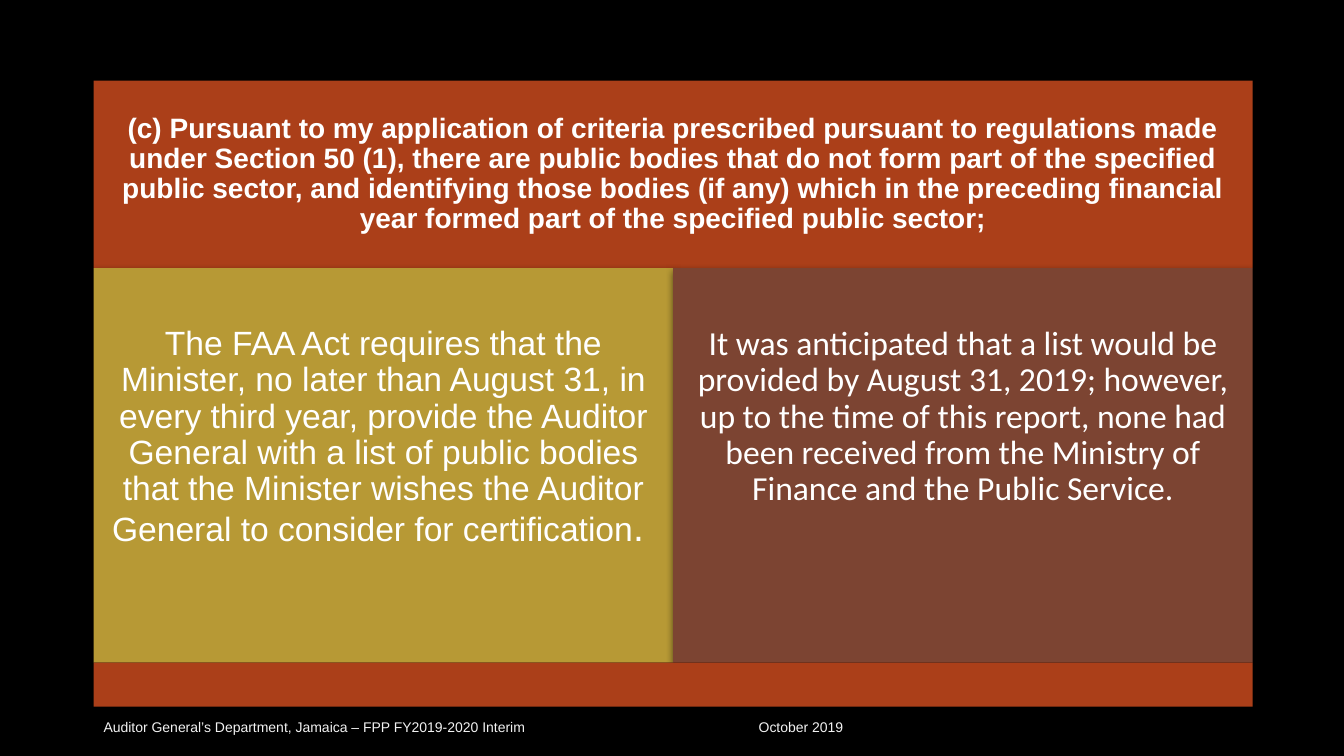
from dataclasses import dataclass

from lxml import etree
from pptx import Presentation
from pptx.dml.color import RGBColor
from pptx.enum.shapes import MSO_SHAPE
from pptx.enum.text import MSO_ANCHOR, PP_ALIGN
from pptx.oxml.ns import qn
from pptx.util import Cm, Pt

RECT = MSO_SHAPE.RECTANGLE
TOP, MIDDLE = MSO_ANCHOR.TOP, MSO_ANCHOR.MIDDLE
LEFT, CENTER = PP_ALIGN.LEFT, PP_ALIGN.CENTER


@dataclass(frozen=True)
class Theme:
    back: str = "000000"
    rust: str = "AB3F19"
    gold: str = "B79935"
    brown: str = "7C4432"
    white: str = "FFFFFF"
    pale: str = "F2F2F2"
    sans: str = "Arial"
    body: str = "Calibri"
    small: int = 10
    head: int = 20
    text: int = 24
    stop: int = 28


class Deck:
    def __init__(self, theme):
        self.theme = theme
        self.prs = Presentation()
        self.prs.slide_width, self.prs.slide_height = Cm(33.87), Cm(19.05)
        self.slide = self.prs.slides.add_slide(self.prs.slide_layouts[6])
        fill = self.slide.background.fill
        fill.solid()
        fill.fore_color.rgb = RGBColor.from_string(theme.back)

    def panel(self, box, color, shade=False):
        shape = self.slide.shapes.add_shape(RECT, *map(Cm, box))
        shape.fill.solid()
        shape.fill.fore_color.rgb = RGBColor.from_string(color)
        shape.line.fill.background()
        shape.shadow.inherit = False
        if shade:
            self.shade(shape)
        return shape

    def shade(self, shape):
        """Give the shape a soft shadow that falls straight down."""
        effects = shape._element.spPr.find(qn("a:effectLst"))
        outer = etree.SubElement(effects, qn("a:outerShdw"), blurRad=str(Pt(5)),
                                 dist=str(Pt(2)), dir="5400000", rotWithShape="0")
        color = etree.SubElement(outer, qn("a:srgbClr"), val=self.theme.back)
        etree.SubElement(color, qn("a:alpha"), val="60000")

    def label(self, shape, runs, color, align=CENTER, anchor=MIDDLE,
              pad=0.25, top=None, space=0.9):
        """Fill the shape with one paragraph of (text, font, size, bold) runs."""
        frame = shape.text_frame
        frame.word_wrap = True
        frame.vertical_anchor = anchor
        frame.margin_left = frame.margin_right = frame.margin_bottom = Cm(pad)
        frame.margin_top = Cm(pad if top is None else top)
        para = frame.paragraphs[0]
        para.alignment, para.line_spacing = align, space
        for text, face, size, bold in runs:
            run = para.add_run()
            run.text = text
            run.font.name, run.font.size, run.font.bold = face, Pt(size), bold
            run.font.color.rgb = RGBColor.from_string(color)
        return para

    def footer(self, box, runs, tab):
        """Add one line whose second part starts at the tab stop."""
        shape = self.slide.shapes.add_textbox(*map(Cm, box))
        para = self.label(shape, runs, self.theme.pale, LEFT, top=0.13, space=1.0)
        shape.text_frame.margin_bottom = Cm(0.13)
        stops = etree.SubElement(para._p.get_or_add_pPr(), qn("a:tabLst"))
        etree.SubElement(stops, qn("a:tab"), pos=str(Cm(tab)), algn="l")


def main():
    look = Theme()
    deck = Deck(look)
    left, wide = 2.36, 29.21
    half = wide / 2
    head_y, body_y, band_y, foot_y = 2.03, 6.76, 16.7, 17.81

    title = (
        "(c) Pursuant to my application of criteria prescribed pursuant to "
        "regulations made under Section 50 (1), there are public bodies that do "
        "not form part of the specified public sector, and identifying those "
        "bodies (if any) which in the preceding financial year formed part of "
        "the specified public sector;")
    head = deck.panel((left, head_y, wide, body_y - head_y), look.rust)
    deck.label(head, [(title, look.sans, look.head, True)], look.white, pad=0.2)

    rule = (
        "The FAA Act requires that the Minister, no later than August 31, in "
        "every third year, provide the Auditor General with a list of public "
        "bodies that the Minister wishes the Auditor General to consider for "
        "certification")
    result = (
        "It was anticipated that a list would be provided by August 31, 2019; "
        "however, up to the time of this report, none had been received from "
        "the Ministry of Finance and the Public Service.")
    cards = [
        (look.gold, [(rule, look.sans, look.text, False),
                     (". ", look.sans, look.stop, False)]),
        (look.brown, [(result, look.body, look.text, False)]),
    ]
    for i, (color, runs) in enumerate(cards):
        box = (left + i * half, body_y, half, band_y - body_y)
        card = deck.panel(box, color, shade=True)
        deck.label(card, runs, look.white, anchor=TOP, top=1.47)

    deck.panel((left, band_y, wide, foot_y - band_y), look.rust)
    note = "Auditor General’s Department, Jamaica – FPP FY2019-2020 Interim\tOctober 2019"
    deck.footer((left, foot_y, 22.81, 1), [(note, look.sans, look.small, False)], 16.51)
    deck.prs.save("out.pptx")


if __name__ == "__main__":
    main()
